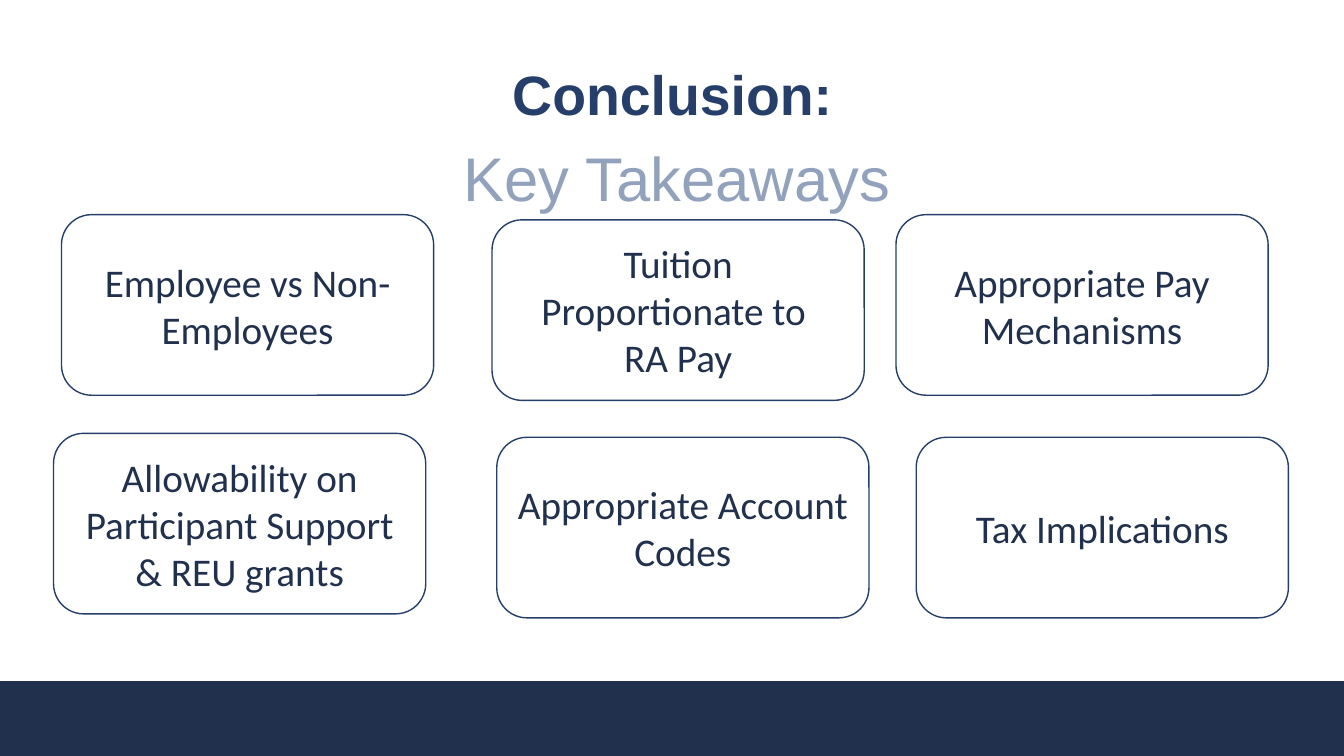
"""Build the key takeaways slide."""
from pptx import Presentation
from pptx.enum import shapes, text
from pptx.dml.color import RGBColor
from pptx.util import Cm, Pt

COLORS = {"navy": "21314D", "blue": "263F6A", "mist": "92A2BD", "white": "FFFFFF"}
SLIDE = (33.87, 19.05)
FOOTER = (0, 17.17, 33.87, 1.86)
HEADING_SIZE = (29.21, 1.93)
HEADINGS = [
    ("Conclusion:", (2.34, 1.4), 39.6, "blue", True, text.MSO_ANCHOR.BOTTOM),
    ("Key Takeaways", (2.46, 3.61), 44, "mist", False, text.MSO_ANCHOR.TOP),
]
CARD_SIZE = (9.38, 4.55)
CARDS = [
    (["Employee vs Non-Employees"], (1.55, 5.41)),
    (["Tuition Proportionate to ", "RA Pay"], (12.4, 5.54)),
    (["Appropriate Pay Mechanisms"], (22.58, 5.41)),
    (["Allowability on Participant Support & REU grants"], (1.35, 10.92)),
    (["Appropriate Account Codes"], (12.52, 11.02)),
    (["Tax Implications"], (23.09, 11.02)),
]


def rgb(name):
    return RGBColor.from_string(COLORS[name])


def add_box(slide, kind, box, fill, line):
    sp = slide.shapes.add_shape(kind, *map(Cm, box))
    sp.shadow.inherit = False
    sp.fill.solid()
    sp.fill.fore_color.rgb = rgb(fill)
    sp.line.color.rgb = rgb(line)
    sp.line.width = Pt(1)
    return sp


def write(sp, lines, font, size, color, anchor, bold=False, spacing=None):
    tf = sp.text_frame
    tf.word_wrap = True
    tf.vertical_anchor = anchor
    for i, line in enumerate(lines):
        p = tf.add_paragraph() if i else tf.paragraphs[0]
        p.alignment = text.PP_ALIGN.CENTER
        p.line_spacing = spacing
        r = p.add_run()
        r.text = line
        r.font.name = font
        r.font.size = Pt(size)
        r.font.bold = bold
        r.font.color.rgb = rgb(color)


def main():
    prs = Presentation()
    prs.slide_width, prs.slide_height = map(Cm, SLIDE)
    s = prs.slides.add_slide(prs.slide_layouts[6])
    add_box(s, shapes.MSO_SHAPE.RECTANGLE, FOOTER, "navy", "navy")
    for line, place, size, color, bold, anchor in HEADINGS:
        sp = s.shapes.add_textbox(*map(Cm, place + HEADING_SIZE))
        write(sp, [line], "Arial", size, color, anchor, bold, 0.9)
    for lines, place in CARDS:
        sp = add_box(s, shapes.MSO_SHAPE.ROUNDED_RECTANGLE,
                     place + CARD_SIZE, "white", "blue")
        write(sp, lines, "Calibri", 28, "navy", text.MSO_ANCHOR.MIDDLE)
    prs.save("out.pptx")


if __name__ == "__main__":
    main()
